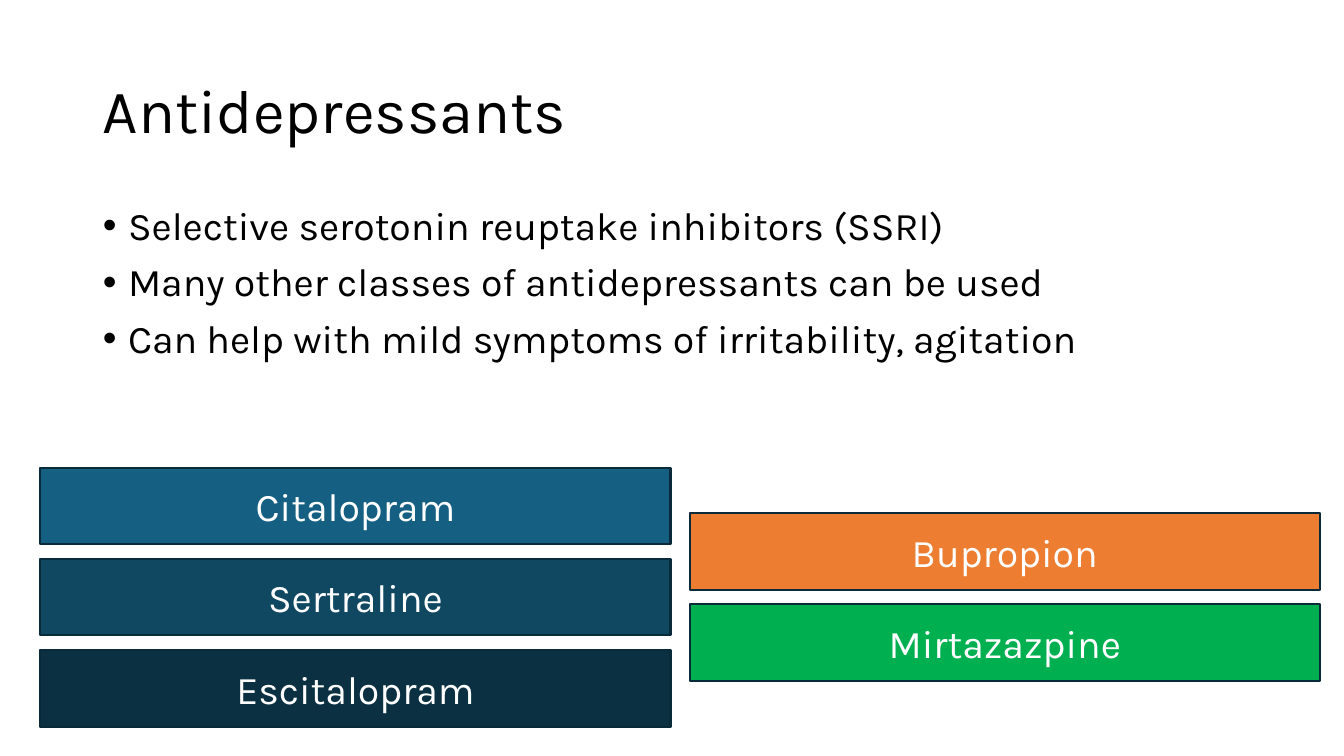
from dataclasses import dataclass

from lxml import etree
from pptx import Presentation
from pptx import util as u
from pptx.dml.color import RGBColor
from pptx.enum import shapes, text
from pptx.oxml.ns import qn


@dataclass(frozen=True)
class Theme:
    font: str = "Karla"
    title_size: int = 44
    body_size: int = 28
    ink: str = "000000"
    on_fill: str = "FFFFFF"
    outline: str = "092A39"
    citalopram: str = "156082"
    sertraline: str = "104862"
    escitalopram: str = "0B3041"
    bupropion: str = "ED7D31"
    mirtazapine: str = "00B050"


THEME = Theme()
BAR_HEIGHT = 0.76
BAR_PITCH = 0.905


def place(sp, left, top, width, height):
    sp.left, sp.top = u.Inches(left), u.Inches(top)
    sp.width, sp.height = u.Inches(width), u.Inches(height)


def style(p, size, color, align):
    p.alignment = align
    for r in p.runs:
        r.font.name = THEME.font
        r.font.size = u.Pt(size)
        r.font.color.rgb = RGBColor.from_string(color)


def add_title(s, box, title):
    sp = s.shapes.title
    place(sp, *box)
    tf = sp.text_frame
    tf.text = title
    tf.vertical_anchor = text.MSO_ANCHOR.MIDDLE
    p = tf.paragraphs[0]
    p.line_spacing = 0.9
    style(p, THEME.title_size, THEME.ink, text.PP_ALIGN.LEFT)


def add_bullets(s, box, items):
    sp = s.placeholders[1]
    place(sp, *box)
    tf = sp.text_frame
    tf.vertical_anchor = text.MSO_ANCHOR.TOP
    for i, item in enumerate(items):
        p = tf.add_paragraph() if i else tf.paragraphs[0]
        p.text = item
        pPr = p._p.get_or_add_pPr()
        pPr.set("marL", str(u.Inches(0.25)))
        pPr.set("indent", str(u.Inches(-0.25)))
        etree.SubElement(pPr, qn("a:buFont")).set("typeface", "Arial")
        etree.SubElement(pPr, qn("a:buChar")).set("char", "•")
        p.line_spacing = 0.9
        p.space_before = u.Pt(10 if i else 0)
        style(p, THEME.body_size, THEME.ink, text.PP_ALIGN.LEFT)


def add_drug_bars(s, left, top, width, drugs):
    for i, (name, fill) in enumerate(drugs):
        sp = s.shapes.add_shape(
            shapes.MSO_SHAPE.RECTANGLE,
            u.Inches(left), u.Inches(top + i * BAR_PITCH),
            u.Inches(width), u.Inches(BAR_HEIGHT))
        sp.shadow.inherit = False
        sp.fill.solid()
        sp.fill.fore_color.rgb = RGBColor.from_string(fill)
        sp.line.color.rgb = RGBColor.from_string(THEME.outline)
        sp.line.width = u.Pt(1.5)
        tf = sp.text_frame
        tf.text = name
        tf.vertical_anchor = text.MSO_ANCHOR.MIDDLE
        style(tf.paragraphs[0], THEME.body_size, THEME.on_fill, text.PP_ALIGN.CENTER)


def antidepressants_slide(prs):
    s = prs.slides.add_slide(prs.slide_layouts[1])
    add_title(s, (0.92, 0.4, 11.5, 1.45), "Antidepressants")
    add_bullets(s, (0.92, 2, 11.5, 4.76), [
        "Selective serotonin reuptake inhibitors (SSRI)",
        "Many other classes of antidepressants can be used",
        "Can help with mild symptoms of irritability, agitation",
    ])
    add_drug_bars(s, 0.4, 4.64, 6.25, [
        ("Citalopram", THEME.citalopram),
        ("Sertraline", THEME.sertraline),
        ("Escitalopram", THEME.escitalopram),
    ])
    add_drug_bars(s, 6.84, 5.09, 6.25, [
        ("Bupropion", THEME.bupropion),
        ("Mirtazazpine", THEME.mirtazapine),
    ])


def main():
    prs = Presentation()
    prs.slide_width, prs.slide_height = u.Inches(13.33), u.Inches(7.5)
    antidepressants_slide(prs)
    prs.save("out.pptx")


if __name__ == "__main__":
    main()
